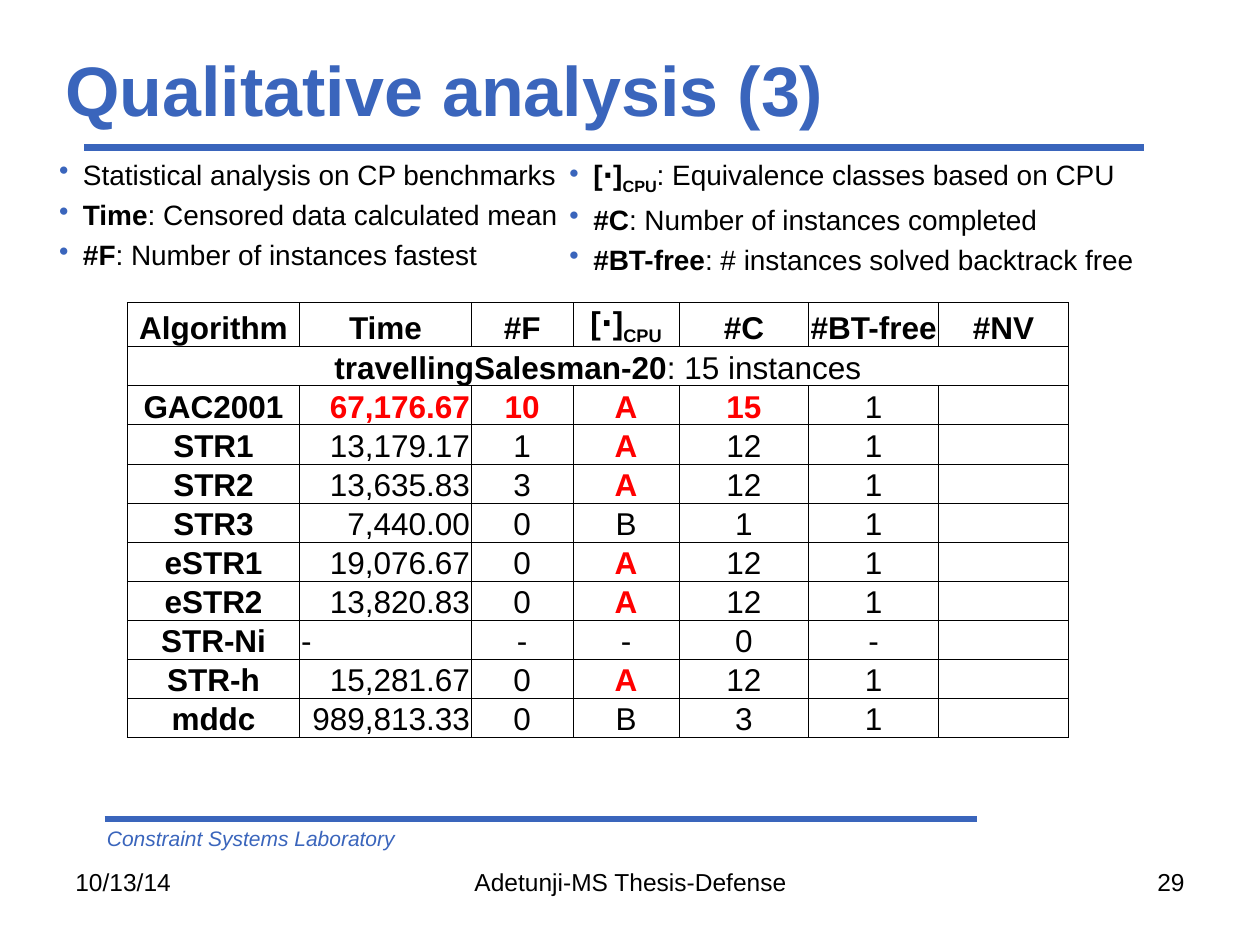
from lxml.etree import SubElement
from pptx import Presentation
from pptx.dml.color import RGBColor
from pptx.enum.shapes import MSO_CONNECTOR
from pptx.enum.text import MSO_ANCHOR, MSO_AUTO_SIZE, PP_ALIGN
from pptx.oxml.ns import qn
from pptx.util import Inches, Pt

COLORS = {"blue": "3A65BC", "black": "000000", "red": "FF0000"}
LEFT, MID, RIGHT = PP_ALIGN.LEFT, PP_ALIGN.CENTER, PP_ALIGN.RIGHT

# A paragraph is a list of (text, style); styles: b bold, s subscript
CLASSES = [("[⋅]", "b"), ("CPU", "bs")]
NOTES = [
    (0.37, 4.88, [
        [("Statistical analysis on CP benchmarks", "")],
        [("Time", "b"), (": Censored data calculated mean", "")],
        [("#F", "b"), (": Number of instances fastest", "")],
    ]),
    (4.42, 5.71, [
        CLASSES + [(": Equivalence classes based on CPU", "")],
        [("#C", "b"), (": Number of instances completed", "")],
        [("#BT-free", "b"), (": # instances solved backtrack free", "")],
    ]),
]
FOOTERS = [
    (0.5, 2.33, "10/13/14", LEFT),
    (3.42, 3.17, "Adetunji-MS Thesis-Defense", MID),
    (7.17, 2.33, "29", RIGHT),
]
RULES = [(0.67, 9.08, 1.17), (0.83, 7.75, 6.5)]
WIDTHS = [1.37, 1.36, 0.81, 0.84, 1.03, 1.03, 1.03]
HEADS = ["Algorithm", "Time", "#F", CLASSES, "#C", "#BT-free", "#NV"]
GROUP = [("travellingSalesman-20", "b"), (": 15 instances", "")]
RESULTS = [
    ("GAC2001", "67,176.67", "10", "A", "15", "1", ""),
    ("STR1", "13,179.17", "1", "A", "12", "1", ""),
    ("STR2", "13,635.83", "3", "A", "12", "1", ""),
    ("STR3", "7,440.00", "0", "B", "1", "1", ""),
    ("eSTR1", "19,076.67", "0", "A", "12", "1", ""),
    ("eSTR2", "13,820.83", "0", "A", "12", "1", ""),
    ("STR-Ni", "-", "-", "-", "0", "-", ""),
    ("STR-h", "15,281.67", "0", "A", "12", "1", ""),
    ("mddc", "989,813.33", "0", "B", "3", "1", ""),
]
BEST = {"67,176.67", "10", "A", "15"}


def rgb(name):
    return RGBColor.from_string(COLORS[name])


def add_bullet(para):
    props = para._p.get_or_add_pPr()
    props.set("marL", str(Inches(0.19)))
    props.set("indent", str(-Inches(0.19)))
    tint = SubElement(props, qn("a:buClr"))
    SubElement(tint, qn("a:srgbClr"), val=COLORS["blue"])
    SubElement(props, qn("a:buChar"), char="•")


def write(frame, paras, size=18, color="black", bold=False, italic=False,
          align=LEFT, bullet=False, gap=0):
    """Fill a frame; paras is one string or a list of paragraphs of runs."""
    if isinstance(paras, str):
        paras = [[(paras, "")]]
    for i, runs in enumerate(paras):
        para = frame.add_paragraph() if i else frame.paragraphs[0]
        para.alignment = align
        if i:
            para.space_before = Pt(gap)
        if bullet:
            add_bullet(para)
        para.font.size = Pt(size)
        for text, style in runs:
            run = para.add_run()
            run.text = text
            font = run.font
            font.name, font.size = "Arial", Pt(size)
            font.bold, font.italic = bold or "b" in style, italic
            font.color.rgb = rgb(color)
            if "s" in style:
                font._element.set("baseline", "-25000")


def add_text(slide, x, y, w, h, paras, **style):
    frame = slide.shapes.add_textbox(
        Inches(x), Inches(y), Inches(w), Inches(h)).text_frame
    frame.word_wrap = True
    write(frame, paras, **style)
    return frame


def add_rule(slide, left, right, y):
    line = slide.shapes.add_connector(
        MSO_CONNECTOR.STRAIGHT, Inches(left), Inches(y), Inches(right), Inches(y))
    line.line.color.rgb = rgb("blue")
    line.line.width = Pt(4)
    SubElement(line._element.spPr, qn("a:effectLst"))


def style_cell(cell):
    cell.margin_left = cell.margin_right = cell.margin_top = Inches(0.01)
    cell.margin_bottom = 0
    cell.vertical_anchor = MSO_ANCHOR.BOTTOM
    props = cell._tc.get_or_add_tcPr()
    for side in ("lnL", "lnR", "lnT", "lnB"):
        edge = SubElement(props, qn(f"a:{side}"), w=str(Pt(0.5)))
        fill = SubElement(edge, qn("a:solidFill"))
        SubElement(fill, qn("a:srgbClr"), val=COLORS["black"])
    cell.fill.background()


def add_results(slide):
    count = len(RESULTS) + 2
    table = slide.shapes.add_table(
        count, len(WIDTHS), Inches(1.01), Inches(2.4),
        Inches(sum(WIDTHS)), Inches(0.28 * count)).table
    table.first_row = table.horz_banding = False
    for col, width in zip(table.columns, WIDTHS):
        col.width = Inches(width)
    for row in table.rows:
        row.height = Inches(0.28)
    for cell in table.iter_cells():
        style_cell(cell)

    for c, head in enumerate(HEADS):
        paras = head if isinstance(head, str) else [head]
        write(table.cell(0, c).text_frame, paras, bold=True, align=MID)
    table.cell(1, 0).merge(table.cell(1, len(WIDTHS) - 1))
    write(table.cell(1, 0).text_frame, [GROUP], align=MID)
    for r, values in enumerate(RESULTS, 2):
        for c, value in enumerate(values):
            if not value:
                continue
            best = value in BEST
            align = MID if c != 1 else LEFT if value == "-" else RIGHT
            write(table.cell(r, c).text_frame, value, align=align,
                  bold=best or c == 0, color="red" if best else "black")


def main():
    deck = Presentation()
    deck.slide_width, deck.slide_height = Inches(10), Inches(7.5)
    slide = deck.slides.add_slide(deck.slide_layouts[5])

    title = slide.shapes.title
    title.left, title.top = Inches(0.42), Inches(0.33)
    title.width, title.height = Inches(9), Inches(0.75)
    title.text_frame.auto_size = MSO_AUTO_SIZE.NONE
    title.text_frame.vertical_anchor = MSO_ANCHOR.MIDDLE
    write(title.text_frame, "Qualitative analysis (3)", size=40, color="blue", bold=True)

    for rule in RULES:
        add_rule(slide, *rule)
    add_text(slide, 0.75, 6.5, 5.25, 0.3, "Constraint Systems Laboratory",
             size=12, color="blue", italic=True)
    for x, width, text, align in FOOTERS:
        add_text(slide, x, 6.83, width, 0.52, text, size=14, align=align)
    add_results(slide)
    for x, width, paras in NOTES:
        frame = add_text(slide, x, 1.18, width, 1.19, paras,
                         size=16, bullet=True, gap=3.8)
        frame.margin_top = Inches(0.07)
    deck.save("out.pptx")


if __name__ == "__main__":
    main()
